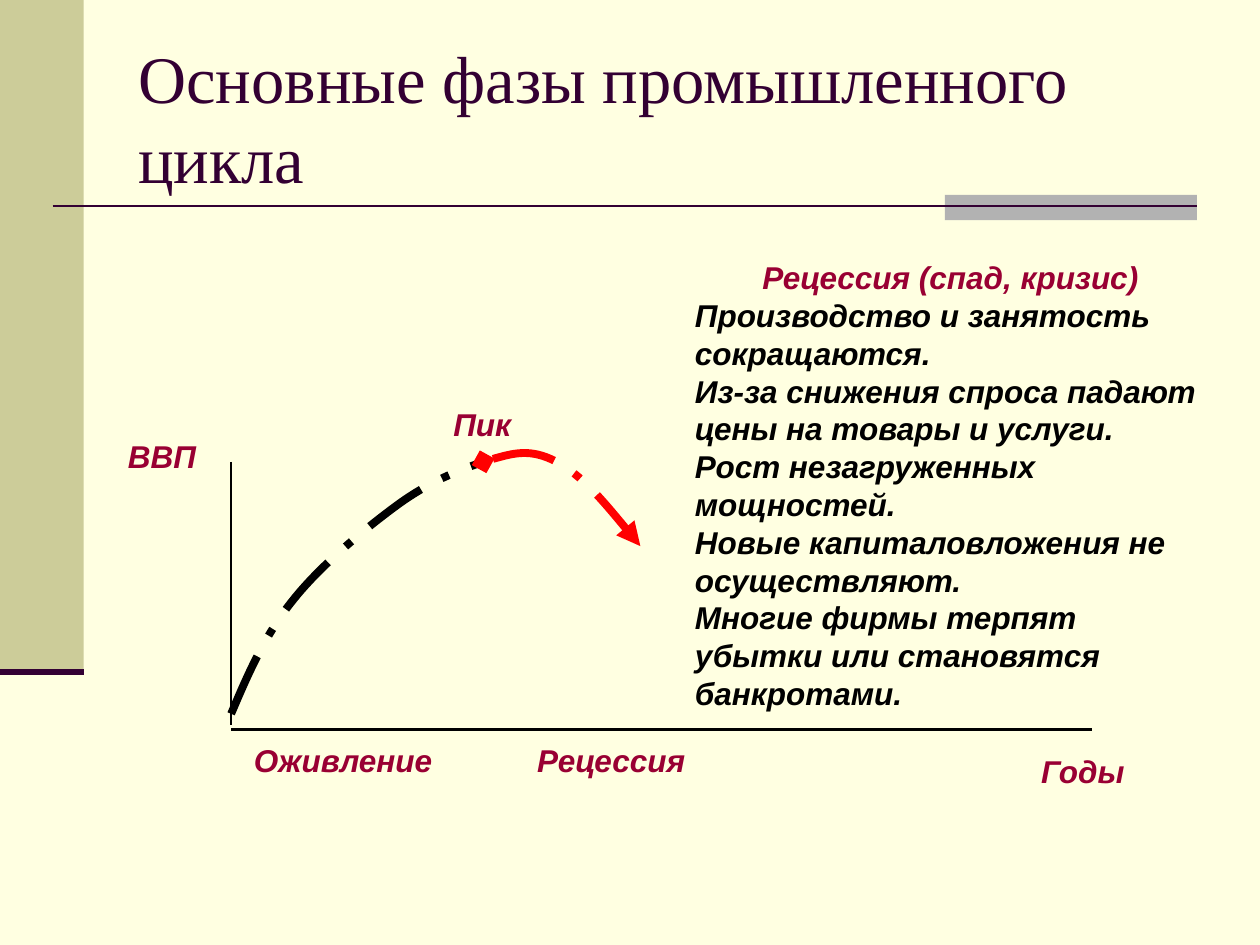
from dataclasses import dataclass
from typing import Optional

from lxml import etree
from pptx import Presentation
from pptx.dml.color import RGBColor
from pptx.enum.dml import MSO_LINE_DASH_STYLE as Dash
from pptx.enum.shapes import MSO_CONNECTOR as Connector, MSO_SHAPE as Shape
from pptx.enum.text import MSO_ANCHOR as Anchor, PP_ALIGN as Align
from pptx.oxml.ns import qn
from pptx.util import Cm, Pt

COLORS = {
    "background": "FFFFE1",
    "band": "CCCC99",
    "accent": "B2B2B2",
    "plum": "330033",
    "crimson": "990033",
    "black": "000000",
    "red": "FF0000",
}
Point = tuple[float, float]


@dataclass
class Area:
    left: float
    top: float
    width: float
    height: float

    def lengths(self) -> list[Cm]:
        return [Cm(v) for v in (self.left, self.top, self.width, self.height)]


@dataclass
class Line:
    start: Point
    end: Point
    color: str
    width: float


@dataclass
class Label:
    text: str
    area: Area
    fill: Optional[str] = None


@dataclass
class Curve:
    points: list[Point]  # start, then two controls and an end per segment
    color: str
    head: Optional[str] = None
    tail: Optional[str] = None


BANDS = [(Area(0, 0, 1.69, 13.55), "band"), (Area(19.05, 3.93, 5.08, 0.51), "accent")]
LINES = [
    Line((1.06, 4.15), (24.13, 4.15), "plum", 1.5),
    Line((0, 13.55), (1.69, 13.55), "plum", 3.5),
    Line((4.66, 9.31), (4.66, 14.61), "black", 1.5),
    Line((4.66, 14.7), (22.01, 14.7), "black", 1.5),
]
LABELS = [
    Label("Годы", Area(20.74, 15.03, 3.6, 1.03)),
    Label("ВВП", Area(2.33, 8.68, 2.12, 1.03)),
    Label("Оживление", Area(4.87, 14.82, 4.24, 1.03)),
    Label("Пик", Area(8.89, 8.04, 2.33, 1.03), "background"),
    Label("Рецессия", Area(10.58, 14.82, 4.24, 1.03)),
]
CURVES = [
    Curve([(4.66, 14.39), (5, 13.59), (5.35, 12.78), (5.93, 12.07),
           (6.5, 11.36), (7.41, 10.62), (8.04, 10.16),
           (8.68, 9.7), (9.21, 9.5), (9.74, 9.31)], "black"),
    Curve([(9.74, 9.31), (10.21, 9.17), (10.69, 9.03), (11.22, 9.31),
           (11.75, 9.6), (12.33, 10.3), (12.91, 11.01)], "red", "diamond", "triangle"),
]
RECESSION = [
    "Рецессия (спад, кризис)",
    "Производство и занятость сокращаются.",
    "Из-за снижения спроса падают цены на товары и услуги. Рост незагруженных мощностей.",
    "Новые капиталовложения не осуществляют.",
    "Многие фирмы терпят убытки или становятся банкротами.",
]


def rgb(name: str) -> RGBColor:
    return RGBColor.from_string(COLORS[name])


def add_band(page, area: Area, color: str) -> None:
    band = page.shapes.add_shape(Shape.RECTANGLE, *area.lengths())
    band.shadow.inherit = False
    band.fill.solid()
    band.fill.fore_color.rgb = rgb(color)
    band.line.fill.background()


def add_line(page, line: Line) -> None:
    ends = [Cm(v) for v in (*line.start, *line.end)]
    connector = page.shapes.add_connector(Connector.STRAIGHT, *ends)
    connector.line.color.rgb = rgb(line.color)
    connector.line.width = Pt(line.width)
    etree.SubElement(connector._element.spPr, qn("a:effectLst"))


def add_text(page, area: Area, texts: list[str], colors: list[str],
             font: str = "Arial", size: float = 18, emphasis: bool = True):
    box = page.shapes.add_textbox(*area.lengths())
    frame = box.text_frame
    frame.word_wrap = True
    frame.text = "\n".join(texts)
    for para, color in zip(frame.paragraphs, colors):
        for span in para.runs:
            span.font.name = font
            span.font.size = Pt(size)
            span.font.bold = span.font.italic = emphasis
            span.font.color.rgb = rgb(color)
    return box


def add_label(page, label: Label) -> None:
    box = add_text(page, label.area, [label.text], ["crimson"])
    if label.fill:
        box.fill.solid()
        box.fill.fore_color.rgb = rgb(label.fill)


def add_curve(page, curve: Curve) -> None:
    points = [(Cm(x), Cm(y)) for x, y in curve.points]
    builder = page.shapes.build_freeform(*points[0])
    builder.add_line_segments(points[1:], close=False)
    shape = builder.convert_to_shape()
    shape.shadow.inherit = False
    shape.fill.background()
    shape.line.color.rgb = rgb(curve.color)
    shape.line.width = Pt(4.5)
    shape.line.dash_style = Dash.LONG_DASH_DOT

    # Join every three straight segments into one Bezier segment
    segments = list(shape._element.iter(qn("a:lnTo")))
    for first in range(0, len(segments), 3):
        bezier = etree.Element(qn("a:cubicBezTo"))
        segments[first].addprevious(bezier)
        for segment in segments[first:first + 3]:
            bezier.append(segment[0])
            segment.getparent().remove(segment)

    # Arrowheads
    outline = shape._element.spPr.find(qn("a:ln"))
    for tag, kind in (("a:headEnd", curve.head), ("a:tailEnd", curve.tail)):
        if kind:
            etree.SubElement(outline, qn(tag), type=kind)


def main() -> None:
    deck = Presentation()
    deck.slide_width, deck.slide_height = Cm(25.4), Cm(19.05)
    page = deck.slides.add_slide(deck.slide_layouts[6])
    page.background.fill.solid()
    page.background.fill.fore_color.rgb = rgb("background")

    # Decoration and axes
    for area, color in BANDS:
        add_band(page, area, color)
    for line in LINES:
        add_line(page, line)

    # Title and description
    title = add_text(page, Area(2.54, 0.76, 21.59, 3.18),
                     ["Основные фазы промышленного цикла"], ["plum"],
                     "Times New Roman", 38, False)
    title.text_frame.vertical_anchor = Anchor.MIDDLE
    colors = ["crimson"] + ["black"] * (len(RECESSION) - 1)
    description = add_text(page, Area(13.76, 5.08, 10.8, 9.4), RECESSION, colors)
    description.text_frame.paragraphs[0].alignment = Align.CENTER

    # Cycle diagram
    for label in LABELS:
        add_label(page, label)
    for curve in CURVES:
        add_curve(page, curve)

    deck.save("out.pptx")


if __name__ == "__main__":
    main()
